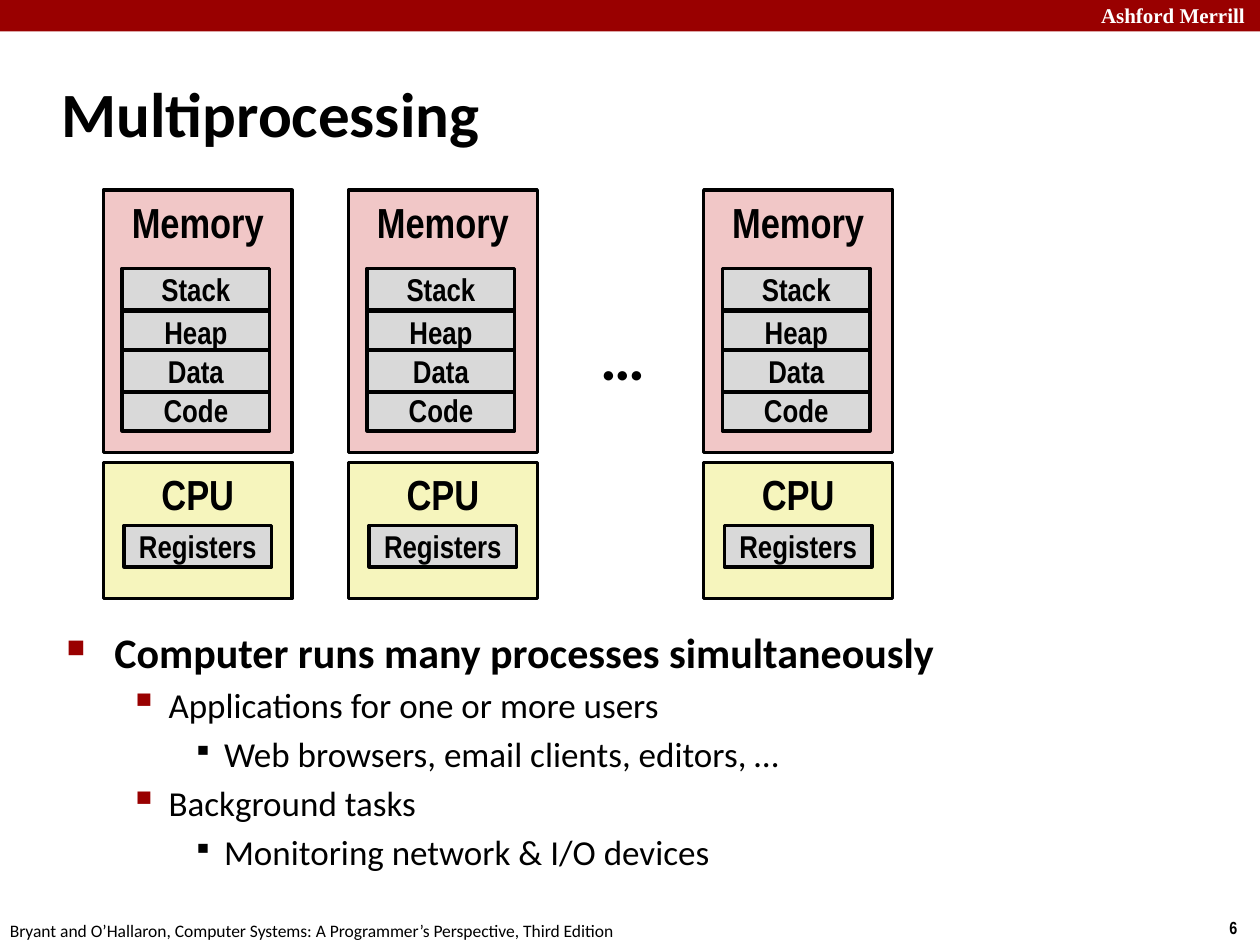
from lxml.etree import SubElement
from pptx import Presentation
from pptx.dml.color import RGBColor
from pptx.enum.shapes import MSO_SHAPE
from pptx.enum.text import MSO_ANCHOR, PP_ALIGN
from pptx.oxml.ns import qn
from pptx.util import Inches, Pt

# The page is a grid of 100 columns by 75 rows.
COLUMNS, ROWS = 100, 75
WIDTH, HEIGHT = Inches(10), Inches(7.5)

COLORS = {
    "banner": "990000",
    "white": "FFFFFF",
    "black": "000000",
    "memory": "F1C7C7",
    "cpu": "F6F5BD",
    "segment": "D9D9D9",
}
BODY_FONT, LABEL_FONT, BANNER_FONT = "Calibri", "Arial Narrow", "Times New Roman"

COMPUTER_COLUMNS = (8.2, 27.65, 55.85)
# Data comes last because it overlaps the edges of Heap and Code.
SEGMENT_ROWS = {"Stack": 21.3, "Heap": 24.7, "Code": 30.9, "Data": 27.8}

# Per outline level: bullet, its color, its size in %, text size, bold, margin, hanging
LEVELS = (
    ("■", "banner", 60, 24, True, 0.38, 0.38),
    ("▪", "banner", 110, 20, False, 0.81, 0.31),
    ("▪", "black", 80, 20, False, 1.25, 0.25),
)
OUTLINE = (
    (0, "Computer runs many processes simultaneously"),
    (1, "Applications for one or more users"),
    (2, "Web browsers, email clients, editors, …"),
    (1, "Background tasks"),
    (2, "Monitoring network & I/O devices"),
)


def place(column, row, columns, rows):
    """Turn grid units into left, top, width and height."""
    return (int(WIDTH * column / COLUMNS), int(HEIGHT * row / ROWS),
            int(WIDTH * columns / COLUMNS), int(HEIGHT * rows / ROWS))


def rgb(name):
    return RGBColor.from_string(COLORS[name])


def write(para, text, *, size, font=BODY_FONT, color="black", bold=False,
          align=PP_ALIGN.LEFT):
    para.alignment = align
    span = para.add_run()
    span.text = text
    span.font.size = Pt(size)
    span.font.name = font
    span.font.bold = bold
    span.font.color.rgb = rgb(color)


def add_text(page, area, text, *, wrap=False, anchor=MSO_ANCHOR.TOP, **style):
    frame = page.shapes.add_textbox(*place(*area)).text_frame
    frame.word_wrap = wrap
    frame.vertical_anchor = anchor
    write(frame.paragraphs[0], text, **style)


def add_box(page, area, fill, outlined=True):
    box = page.shapes.add_shape(MSO_SHAPE.RECTANGLE, *place(*area))
    box.shadow.inherit = False
    box.fill.solid()
    box.fill.fore_color.rgb = rgb(fill)
    if outlined:
        box.line.color.rgb = rgb("black")
        box.line.width = Pt(2)
    else:
        box.line.fill.background()
    return box


def add_labelled_box(page, area, fill, label, size, anchor):
    frame = add_box(page, area, fill).text_frame
    frame.word_wrap = True
    frame.vertical_anchor = anchor
    write(frame.paragraphs[0], label, size=size, font=LABEL_FONT, bold=True,
          align=PP_ALIGN.CENTER)


def add_unit(page, area, fill, label):
    add_labelled_box(page, area, fill, label, 24, MSO_ANCHOR.TOP)


def add_segment(page, column, row, label):
    add_labelled_box(page, (column, row, 11.7, 3.3), "segment", label, 18,
                     MSO_ANCHOR.MIDDLE)


def add_computer(page, column):
    """Draw a CPU with its registers below a memory with its segments."""
    add_unit(page, (column, 36.7, 15, 10.8), "cpu", "CPU")
    add_segment(page, column + 1.65, 41.7, "Registers")
    add_unit(page, (column, 15.1, 15, 20.8), "memory", "Memory")
    for label, row in SEGMENT_ROWS.items():
        add_segment(page, column + 1.5, row, label)


def set_bullet(para, character, color, percent, margin, hanging):
    properties = para._p.get_or_add_pPr()
    properties.set("marL", str(Inches(margin)))
    properties.set("indent", str(-Inches(hanging)))
    bullet_color = SubElement(properties, qn("a:buClr"))
    SubElement(bullet_color, qn("a:srgbClr"), val=COLORS[color])
    SubElement(properties, qn("a:buSzPct"), val=str(percent * 1000))
    SubElement(properties, qn("a:buChar"), char=character)


def add_outline(page, area, entries):
    frame = page.shapes.add_textbox(*place(*area)).text_frame
    frame.word_wrap = True
    for index, (level, text) in enumerate(entries):
        para = frame.add_paragraph() if index else frame.paragraphs[0]
        character, color, percent, size, bold, margin, hanging = LEVELS[level]
        para.level = level
        para.space_before = Pt(size * 0.2)
        set_bullet(para, character, color, percent, margin, hanging)
        write(para, text, size=size, bold=bold)


def add_frame(page):
    """Draw the banner, the page number and the source line."""
    add_box(page, (0, 0, COLUMNS, 2.5), "banner", outlined=False)
    add_text(page, (86.4, -0.3, 14.3, 3), "Ashford Merrill", size=12,
             font=BANNER_FONT, color="white", bold=True)
    add_text(page, (96.6, 72.3, 3.4, 2.7), "6", size=10, font=LABEL_FONT, bold=True)
    add_text(page, (-0.2, 72.5, 50.8, 2.7),
             "Bryant and O’Hallaron, Computer Systems: "
             "A Programmer’s Perspective, Third Edition", size=10)


def main():
    deck = Presentation()
    deck.slide_width, deck.slide_height = WIDTH, HEIGHT
    page = deck.slides.add_slide(deck.slide_layouts[6])
    add_frame(page)
    add_text(page, (3.9, 4.8, 83, 8.3), "Multiprocessing", size=36, bold=True,
             wrap=True, anchor=MSO_ANCHOR.MIDDLE)
    add_outline(page, (4.3, 49.2, 86.4, 21.6), OUTLINE)
    for column in COMPUTER_COLUMNS:
        add_computer(page, column)
    add_text(page, (46.7, 24.7, 5.6, 7.1), "…", size=36, bold=True)
    deck.save("out.pptx")


if __name__ == "__main__":
    main()
